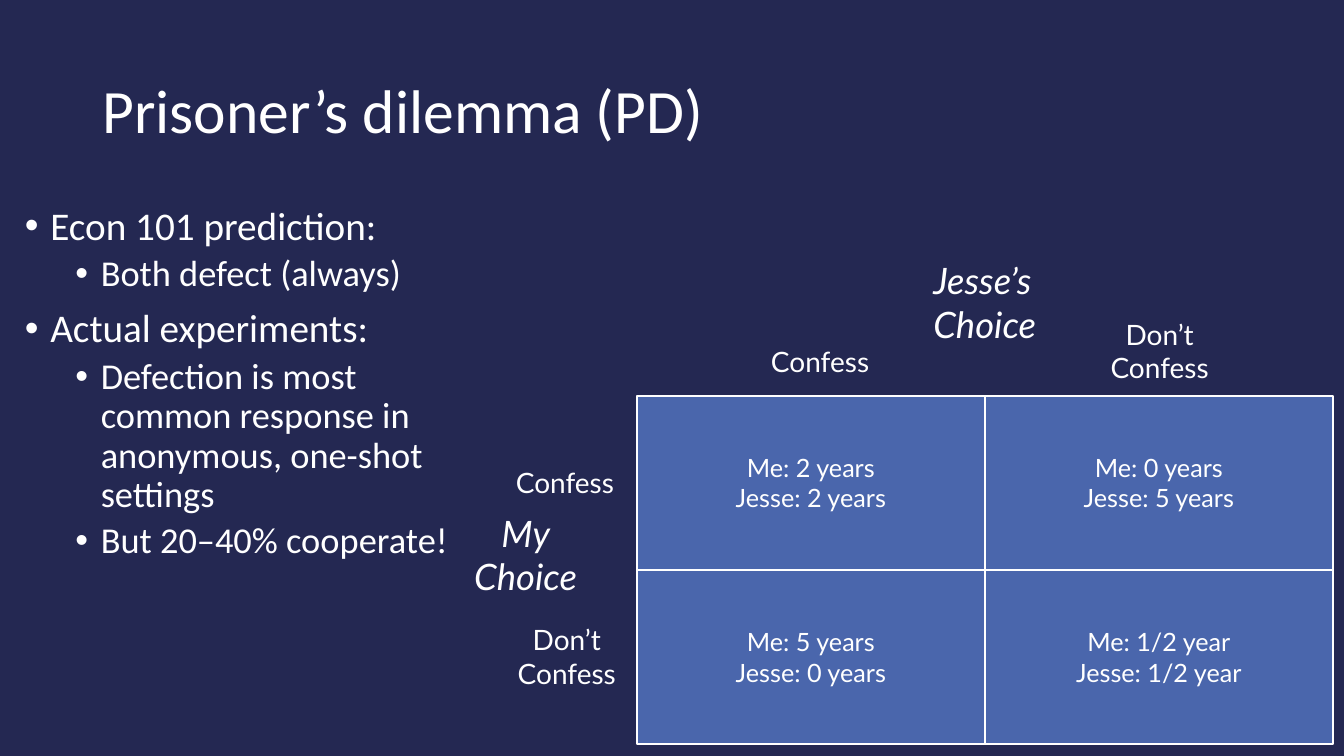
from lxml import etree
from pptx import Presentation, util as u
from pptx.dml.color import RGBColor
from pptx.enum import shapes, text
from pptx.oxml import ns

COLORS = {"background": "242852", "cell": "4A66AC", "white": "FFFFFF"}
LEFT, CENTER = text.PP_ALIGN.LEFT, text.PP_ALIGN.CENTER


def add_line(frame, words, size, font="Lato", align=LEFT, italic=False):
    """Write one paragraph, using the frame's empty first one if it is free."""
    paragraph = frame.paragraphs[0]
    if paragraph.runs:
        paragraph = frame.add_paragraph()
    paragraph.alignment = align
    run = paragraph.add_run()
    run.text = words
    run.font.name = font
    run.font.size = u.Pt(size)
    run.font.italic = italic
    run.font.color.rgb = RGBColor.from_string(COLORS["white"])
    return paragraph


def add_box(left, top, width, height, wrap=True):
    box = slide.shapes.add_textbox(u.Cm(left), u.Cm(top), u.Cm(width), u.Cm(height))
    box.text_frame.word_wrap = wrap
    return box.text_frame


presentation = Presentation()
presentation.slide_width, presentation.slide_height = u.Cm(33.87), u.Cm(19.05)
slide = presentation.slides.add_slide(presentation.slide_layouts[6])
slide.background.fill.solid()
slide.background.fill.fore_color.rgb = RGBColor.from_string(COLORS["background"])

# Title
title = add_box(2.33, 1.01, 29.21, 3.68)
title.vertical_anchor = text.MSO_ANCHOR.MIDDLE
add_line(title, "Prisoner’s dilemma (PD)", 44, "Calibri").line_spacing = 0.9

# Bullet list: level and wording
bullets = [
    (0, "Econ 101 prediction:"),
    (1, "Both defect (always)"),
    (0, "Actual experiments:"),
    (1, "Defection is most common response in anonymous, one-shot settings"),
    (1, "But 20–40% cooperate!"),
]
body = add_box(0.38, 5.07, 11.79, 13.67)
for level, words in bullets:
    paragraph = add_line(body, words, 28 - 2 * level, "Calibri")
    paragraph.level = level
    paragraph.line_spacing = 0.9
    paragraph.space_before = u.Pt(10 - 5 * level)
    properties = paragraph._p.get_or_add_pPr()
    properties.set("marL", str(u.Cm(0.64 + 1.27 * level)))
    properties.set("indent", str(-u.Cm(0.64)))
    etree.SubElement(properties, ns.qn("a:buFont"), typeface="Arial")
    etree.SubElement(properties, ns.qn("a:buChar"), char="•")

# Payoff matrix: rows are my choice, columns are Jesse's
payoffs = [
    [("2 years", "2 years"), ("0 years", "5 years")],
    [("5 years", "0 years"), ("1/2 year", "1/2 year")],
]
cell_width, cell_height = 8.77, 4.39
for row, row_payoffs in enumerate(payoffs):
    for column, (mine, jesse) in enumerate(row_payoffs):
        cell = slide.shapes.add_shape(
            shapes.MSO_SHAPE.RECTANGLE,
            u.Cm(16.05 + column * cell_width), u.Cm(9.97 + row * cell_height),
            u.Cm(cell_width), u.Cm(cell_height))
        cell.shadow.inherit = False
        cell.fill.solid()
        cell.fill.fore_color.rgb = RGBColor.from_string(COLORS["cell"])
        cell.line.color.rgb = RGBColor.from_string(COLORS["white"])
        cell.line.width = u.Pt(1.5)
        cell.text_frame.vertical_anchor = text.MSO_ANCHOR.MIDDLE
        for words in (f"Me: {mine}", f"Jesse: {jesse}"):
            add_line(cell.text_frame, words, 18, align=CENTER)

# Row, column and axis labels: left, top, width, height, lines, size, alignment
labels = [
    (12.75, 11.61, 3.07, 1.11, ["Confess"], 20, LEFT),
    (12.75, 15.57, 3.07, 1.96, ["Don’t", "Confess"], 20, CENTER),
    (19.18, 8.56, 3.07, 1.11, ["Confess"], 20, LEFT),
    (27.69, 7.87, 3.07, 1.96, ["Don’t", "Confess"], 20, CENTER),
    (11.56, 12.75, 3.38, 2.49, ["My", "Choice"], 26, CENTER),
    (23.27, 6.38, 3.38, 2.49, ["Jesse’s", "Choice"], 26, LEFT),
]
for left, top, width, height, lines, size, align in labels:
    label = add_box(left, top, width, height, wrap=False)
    label.auto_size = text.MSO_AUTO_SIZE.SHAPE_TO_FIT_TEXT
    for words in lines:
        add_line(label, words, size, align=align, italic=size == 26)

presentation.save("out.pptx")
